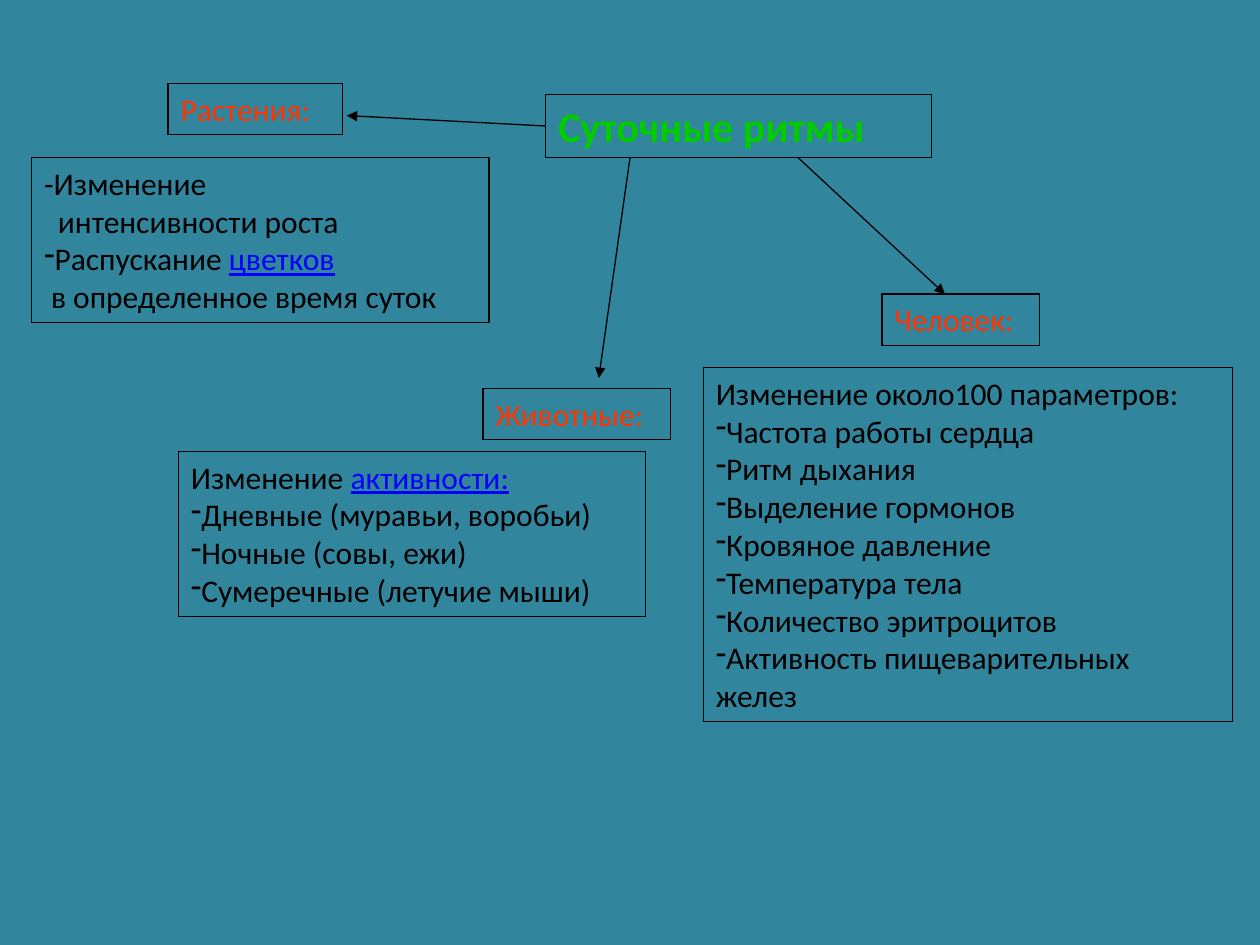
import pptx
import pptx.dml.color
import pptx.enum.shapes
import pptx.enum.text
import pptx.oxml.ns
import pptx.util
from lxml import etree

Cm = pptx.util.Cm
Pt = pptx.util.Pt

COLORS = {
    "background": "31859C",
    "text": "000000",
    "line": "000000",
    "title": "00CC00",
    "label": "FF3300",
    "link": "0000FF",
}

LABELS = [
    ("Растения:", (3.39, 1.69, 3.51, 1.03)),
    ("Животные:", (9.74, 7.83, 3.78, 1.03)),
    ("Человек:", (17.78, 5.93, 3.18, 1.03)),
]

PLANTS = [
    {"text": "-Изменение"},
    {"text": "интенсивности роста", "indent": 0.28},
    {"text": "Распускание ", "link": "цветков", "bullet": True},
    {"text": "в определенное время суток", "indent": 0.14},
]
ANIMALS = [{"text": "Изменение ", "link": "активности:"}] + [
    {"text": text, "bullet": True}
    for text in (
        "Дневные (муравьи, воробьи)",
        "Ночные (совы, ежи)",
        "Сумеречные (летучие мыши)",
    )
]
HUMAN = [
    {"text": "Изменение около100 параметров:"},
    *(
        {"text": text, "bullet": True}
        for text in (
            "Частота работы сердца",
            "Ритм дыхания",
            "Выделение гормонов",
            "Кровяное давление",
            "Температура тела",
            "Количество эритроцитов",
            "Активность пищеварительных",
        )
    ),
    {"text": "желез"},
]


class RhythmSlide:
    font_name = "Calibri"
    line_width = 0.75

    def __init__(self, presentation):
        self.slide = presentation.slides.add_slide(presentation.slide_layouts[5])
        fill = self.slide.background.fill
        fill.solid()
        fill.fore_color.rgb = self.color("background")

    def color(self, name):
        return pptx.dml.color.RGBColor.from_string(COLORS[name])

    def outline(self, shape):
        shape.line.color.rgb = self.color("line")
        shape.line.width = Pt(self.line_width)

    def format_frame(self, shape):
        self.outline(shape)
        frame = shape.text_frame
        frame.word_wrap = True
        frame.auto_size = pptx.enum.text.MSO_AUTO_SIZE.NONE
        frame.vertical_anchor = pptx.enum.text.MSO_ANCHOR.TOP
        return frame

    def format_paragraph(self, paragraph, color, size=18, bold=False):
        paragraph.alignment = pptx.enum.text.PP_ALIGN.LEFT
        paragraph.font.name = self.font_name
        paragraph.font.size = Pt(size)
        paragraph.font.bold = bold
        paragraph.font.color.rgb = self.color(color)

    def title(self, text, box):
        shape = self.slide.shapes.title
        shape.left, shape.top, shape.width, shape.height = map(Cm, box)
        frame = self.format_frame(shape)
        frame.text = text
        self.format_paragraph(frame.paragraphs[0], "title", 24, True)
        return shape

    def text_box(self, lines, box, color="text"):
        shape = self.slide.shapes.add_textbox(*map(Cm, box))
        frame = self.format_frame(shape)
        for number, line in enumerate(lines):
            paragraph = frame.add_paragraph() if number else frame.paragraphs[0]
            paragraph.add_run().text = line["text"]
            self.format_paragraph(paragraph, color)
            if "link" in line:
                run = paragraph.add_run()
                run.text = line["link"]
                run.font.underline = True
                run.font.color.rgb = self.color("link")
            self.indent(paragraph, line)

    def indent(self, paragraph, line):
        properties = paragraph._p.get_or_add_pPr()
        properties.set("marL", str(Cm(line.get("indent", 0))))
        properties.set("indent", "0")
        if line.get("bullet"):
            bullet = etree.Element(pptx.oxml.ns.qn("a:buChar"), char="-")
            properties.insert_element_before(bullet, "a:tabLst", "a:defRPr", "a:extLst")

    def arrow(self, start, end):
        connector = self.slide.shapes.add_connector(
            pptx.enum.shapes.MSO_CONNECTOR.STRAIGHT, *map(Cm, start + end)
        )
        self.outline(connector)
        line = connector.line._get_or_add_ln()
        etree.SubElement(line, pptx.oxml.ns.qn("a:tailEnd"), type="triangle")
        etree.SubElement(connector._element.spPr, pptx.oxml.ns.qn("a:effectLst"))
        return connector


def main():
    presentation = pptx.Presentation()
    presentation.slide_width = Cm(25.4)
    presentation.slide_height = Cm(19.05)

    rhythms = RhythmSlide(presentation)
    title = rhythms.title("Суточные ритмы", (11, 1.9, 7.78, 1.28))
    rhythms.text_box(PLANTS, (0.64, 3.18, 9.22, 3.33))
    rhythms.text_box(ANIMALS, (3.6, 9.1, 9.42, 3.33))
    rhythms.text_box(HUMAN, (14.18, 7.41, 10.67, 7.14))

    plants_arrow = rhythms.arrow((11, 2.54), (6.99, 2.33))
    plants_arrow.begin_connect(title, 1)
    rhythms.arrow((12.7, 3.18), (12.07, 7.62))
    rhythms.arrow((16.09, 3.18), (19.05, 5.93))

    for text, box in LABELS:
        rhythms.text_box([{"text": text}], box, "label")

    presentation.save("out.pptx")


if __name__ == "__main__":
    main()
